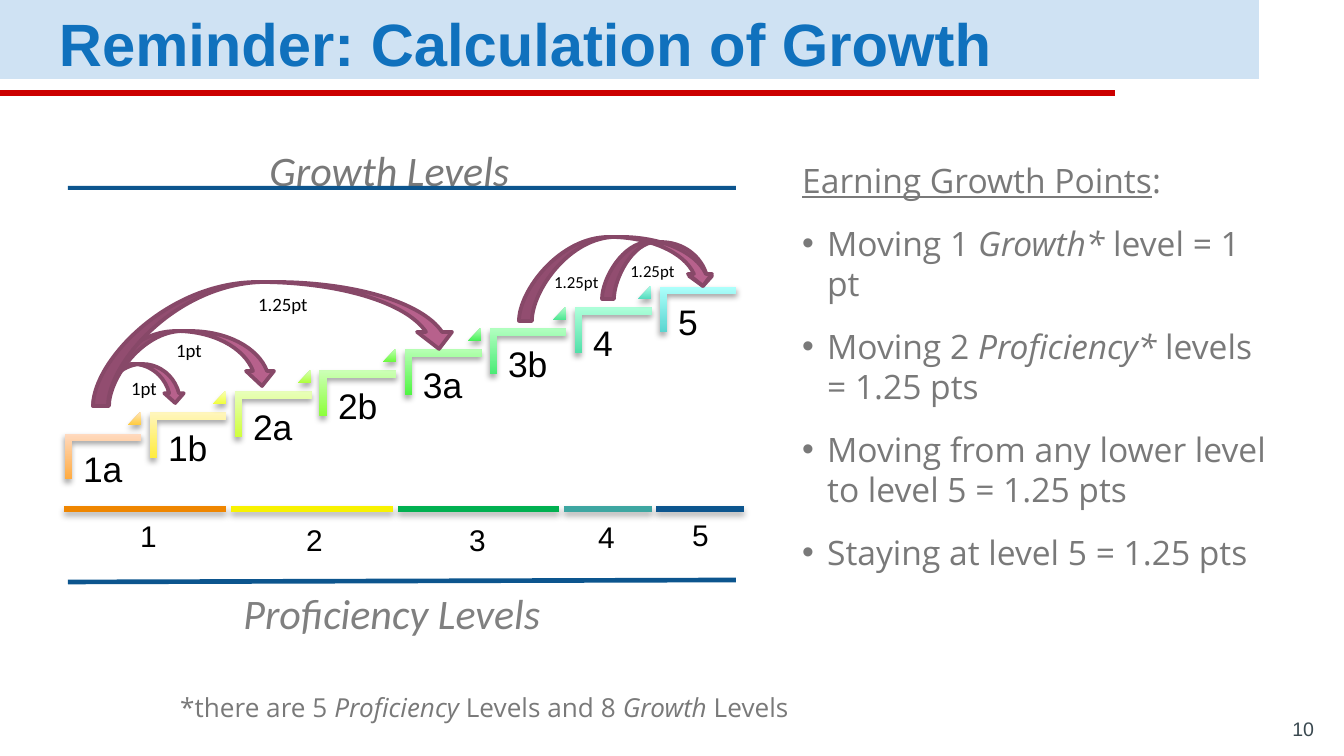
from lxml import etree
from pptx import Presentation
from pptx.dml.color import RGBColor
from pptx.enum.shapes import MSO_CONNECTOR, MSO_SHAPE
from pptx.enum.text import MSO_ANCHOR, PP_ALIGN
from pptx.oxml.ns import qn
from pptx.util import Emu, Pt

COLORS = {
    "band": "CFE2F3", "red": "CC0000", "title": "1071BD", "grey": "797979",
    "midgrey": "808080", "black": "000000", "navy": "0C558E", "number": "3A4950",
    "arrow": "B7618C", "arrow_edge": "874868",
}
STEPS = ["1a", "1b", "2a", "2b", "3a", "3b", "4", "5"]
GRADIENTS = [
    ("FFAB40", "FFDAC0"), ("FFCB3F", "FFE7BE"), ("FFEC3E", "FFF6BD"),
    ("F1FF3D", "F8FFBB"), ("CFFF3B", "E8FFBA"), ("ADFF3A", "D9FFB9"),
    ("8BFF39", "CCFFB7"), ("6BFA3D", "C1FFB6"), ("4EF541", "B7FFB4"),
    ("45F056", "B3FFB8"), ("49EB75", "B2FFC0"), ("4DE591", "B0FFCC"),
    ("51E0A9", "AFFFDA"), ("55DBBE", "AEFFE9"), ("5AD5D0", "ADFFFB"),
]
LEVELS = [
    ("1", 64, 226, "EF8600", (68, 511, 161, 50)),
    ("2", 231, 393, "F8F200", (234, 515, 161, 50)),
    ("3", 398, 559, "00B050", (397, 515, 161, 50)),
    ("4", 564, 652, "3DA6A1", (560, 512, 93, 50)),
    ("5", 656, 744, "0C558E", (654, 510, 93, 50)),
]
SMALL_ARROW = (95, 364, 90, 39)
ARROWS = [
    dict(feet=(93, 109, 406), crest=(176, 183, 190, 331), head=(246, 253, 267, 274, 371), tip=(262, 386)),
    dict(feet=(93, 108, 406), crest=(258, 266, 274, 282), head=(417, 426, 442, 452, 332), tip=(439, 349)),
    dict(feet=(602, 614, 299), crest=(649, 656, 661, 242), head=(689, 696, 707, 712, 276), tip=(703, 286)),
    dict(feet=(519, 532, 321), crest=(609, 616, 621, 237), head=(688, 694, 706, 712, 274), tip=(703, 286)),
]
POINT_LABELS = [
    ("1pt", (118, 370, 67, 36), 10.1), ("1pt", (163, 332, 67, 36), 10.1),
    ("1.25pt", (617, 254, 77, 34), 9), ("1.25pt", (541, 265, 74, 34), 9),
    ("1.25pt", (245, 286, 82, 36), 10.1),
]
RULES = [
    [("Moving 1 ", ""), ("Growth*", "i"), (" level = 1 pt", "")],
    [("Moving 2 ", ""), ("Proficiency*", "i"), (" levels = 1.25 pts", "")],
    [("Moving from any lower level to level 5 = 1.25 pts", "")],
    [("Staying at level 5 = 1.25 pts", "")],
]


def px(n):
    return Emu(round(n * 914400 / 134.4))


def rgb(color):
    return RGBColor.from_string(COLORS.get(color, color))


def add_text(s, box, *paras, size=16, font="Arial", color="black", bold=False, align=None,
             anchor=MSO_ANCHOR.TOP, inset=None, spacing=None, after=None, bullets=False, wrap=True):
    tf = s.shapes.add_textbox(*map(px, box)).text_frame
    tf.word_wrap = wrap
    tf.vertical_anchor = anchor
    if inset is not None:
        tf.margin_left = tf.margin_right = tf.margin_top = tf.margin_bottom = px(inset)
    for i, runs in enumerate(paras):
        p = tf.paragraphs[0] if i == 0 else tf.add_paragraph()
        bullet = bullets and i > 0
        if bullet:
            add_bullet(p)
        p.alignment = align
        if spacing and not bullet:
            p.line_spacing = spacing
        if after:
            p.space_after = Pt(after)
        for text, style in [(runs, "")] if isinstance(runs, str) else runs:
            r = p.add_run()
            r.text = text
            f = r.font
            f.size, f.name, f.bold = Pt(size), font, bold
            f.italic, f.underline = "i" in style, "u" in style
            f.color.rgb = rgb(color)


def add_bullet(p):
    pPr = p._p.get_or_add_pPr()
    pPr.set("marL", str(px(25)))
    pPr.set("indent", str(-px(25)))
    etree.SubElement(pPr, qn("a:buFont")).set("typeface", "Arial")
    etree.SubElement(pPr, qn("a:buChar")).set("char", "•")


def set_shadow(sp, alpha=None, blur=0, dist=0):
    spPr = sp._element.spPr
    for old in spPr.findall(qn("a:effectLst")):
        spPr.remove(old)
    effects = etree.SubElement(spPr, qn("a:effectLst"))
    if alpha:
        shadow = etree.SubElement(effects, qn("a:outerShdw"), blurRad=str(Pt(blur)),
                                  dist=str(Pt(dist)), dir="5400000", rotWithShape="0")
        clr = etree.SubElement(shadow, qn("a:srgbClr"), val=COLORS["black"])
        etree.SubElement(clr, qn("a:alpha"), val=str(alpha * 1000))


def paint(sp, color):
    sp.shadow.inherit = False
    sp.fill.solid()
    sp.fill.fore_color.rgb = rgb(color)
    sp.line.fill.background()
    return sp


def add_shape(s, kind, box, color):
    return paint(s.shapes.add_shape(kind, *map(px, box)), color)


def add_step_part(s, kind, box, colors, adjustments, rotation=0):
    sp = add_shape(s, kind, box, colors[0])
    sp.rotation = rotation
    for i, value in enumerate(adjustments):
        sp.adjustments[i] = value
    sp.fill.gradient()
    sp.fill.gradient_angle = 90
    for stop, color, position in zip(sp.fill.gradient_stops, colors, (0, 1)):
        stop.color.rgb = rgb(color)
        stop.position = position
    sp._element.spPr.find(qn("a:gradFill")).set("rotWithShape", "0")
    set_shadow(sp, 35, 3.1, 1.8)


def add_line(s, start, end, color, width):
    line = s.shapes.add_connector(MSO_CONNECTOR.STRAIGHT, *map(px, start + end))
    line.line.color.rgb = rgb(color)
    line.line.width = Pt(width)
    set_shadow(line)
    return line


def curve(start, end, c1, c2):
    (x0, y0), (x1, y1) = start, end
    return [(x0 + (x1 - x0) * fx, y0 + (y1 - y0) * fy) for fx, fy in (c1, c2)] + [end]


def outline_arrow(sp):
    sp.line.color.rgb = rgb("arrow_edge")
    sp.line.width = Pt(2)


def add_path(paths, sp, segments, **attrs):
    path = etree.SubElement(paths, qn("a:path"), w=str(sp.width), h=str(sp.height), **attrs)
    for i, points in enumerate(segments):
        tag = "a:moveTo" if i == 0 else "a:lnTo" if len(points) == 1 else "a:cubicBezTo"
        command = etree.SubElement(path, qn(tag))
        for x, y in points:
            etree.SubElement(command, qn("a:pt"), x=str(px(x) - sp.left), y=str(px(y) - sp.top))
    etree.SubElement(path, qn("a:close"))


def add_arched_arrow(s, feet, crest, head, tip):
    outer, inner, base = feet
    left, middle, right, top = crest
    barb_l, neck_l, neck_r, barb_r, neck = head
    rise = (0, 0.36), (0.45, 1)
    fall = (0.47, 0), (0.88, 0.4)
    seam = curve((neck_l, neck), (left, top), (0.12, 0.6), (0.53, 1))
    to_left = curve((outer, base), (left, top), *rise)
    to_neck = curve((right, top), (neck_r, neck), *fall)
    to_inner = curve((middle, top), (inner, base), (0.55, 0), (1, 0.64))
    point = [[(barb_r, neck)], [tip], [(barb_l, neck)], [(neck_l, neck)]]
    band = [[(left, top)], [(right, top)], to_neck, *point, seam]
    leg = [[(outer, base)], to_left, [(middle, top)], to_inner]
    edge = [[(outer, base)], to_left, [(right, top)], to_neck, *point, seam, [(middle, top)], to_inner]

    corners = [(px(x), px(y)) for segment in edge for x, y in segment]
    builder = s.shapes.build_freeform(*corners[0])
    builder.add_line_segments(corners[1:])
    sp = paint(builder.convert_to_shape(), "arrow")
    outline_arrow(sp)
    paths = sp._element.spPr.find(qn("a:custGeom")).find(qn("a:pathLst"))
    paths.remove(paths[0])
    add_path(paths, sp, band, stroke="0")
    add_path(paths, sp, leg, stroke="0", fill="darkenLess")
    add_path(paths, sp, edge, fill="none")


def add_staircase(s):
    for i, label in enumerate(STEPS):
        dx, dy = 85 * i, -21 * i
        add_step_part(s, MSO_SHAPE.CORNER, (80 + dx, 418 + dy, 46, 77), GRADIENTS[2 * i], (0.16, 0.16), 90)
        add_text(s, (72 + dx, 441 + dy, 70, 60), label, size=19, inset=11, spacing=0.9)
        if i < len(STEPS) - 1:
            add_step_part(s, MSO_SHAPE.ISOSCELES_TRIANGLE, (128 + dx, 412 + dy, 13, 13),
                          GRADIENTS[2 * i + 1], (1,))


def add_levels(s):
    for label, x0, x1, color, box in LEVELS:
        set_shadow(add_line(s, (x0, 509), (x1, 509), color, 3), 32, 3.5, 2.2)
    for label, x0, x1, color, box in LEVELS:
        add_text(s, box, label, align=PP_ALIGN.CENTER)


def main():
    prs = Presentation()
    prs.slide_width, prs.slide_height = px(1344), px(756)
    s = prs.slides.add_slide(prs.slide_layouts[6])

    add_shape(s, MSO_SHAPE.RECTANGLE, (0, 0, 1259, 79), "band")
    add_shape(s, MSO_SHAPE.RECTANGLE, (0, 90, 1115, 6), "red")
    add_text(s, (46, 4, 1213, 66), "Reminder: Calculation of Growth", size=32, color="title",
             bold=True, anchor=MSO_ANCHOR.MIDDLE, inset=13, spacing=1.15, after=16)
    add_text(s, (789, 133, 501, 410), [("Earning Growth Points", "u"), (":", "")], *RULES, size=18,
             font="Open Sans", color="grey", spacing=1.5, after=12, bullets=True)
    add_text(s, (167, 685, 652, 46),
             [("*there are 5 ", ""), ("Proficiency", "i"), (" Levels and 8 ", ""),
              ("Growth", "i"), (" Levels", "")], size=14, font="Open Sans", color="grey")

    add_staircase(s)
    add_text(s, (12, 124, 755, 441), [("Growth Levels", "i")], size=22.5, font="Calibri",
             color="grey", align=PP_ALIGN.CENTER, inset=13, spacing=1.15)
    add_shape(s, MSO_SHAPE.RECTANGLE, (68, 186, 668, 4), "navy")
    outline_arrow(add_shape(s, MSO_SHAPE.CURVED_DOWN_ARROW, SMALL_ARROW, "arrow"))
    for arrow in ARROWS:
        add_arched_arrow(s, **arrow)
    for label, box, size in POINT_LABELS:
        add_text(s, box, label, size=size, font="Calibri")

    add_levels(s)
    add_text(s, (228, 581, 328, 65), [("Proficiency Levels", "i")], size=22.5, font="Calibri",
             color="midgrey", align=PP_ALIGN.CENTER, wrap=False)
    add_line(s, (68, 582), (736, 580), "navy", 2.5)
    add_text(s, (1247, 717, 81, 35), "10", size=10.5, color="number", align=PP_ALIGN.RIGHT,
             anchor=MSO_ANCHOR.BOTTOM, inset=14)
    prs.save("out.pptx")


if __name__ == "__main__":
    main()
